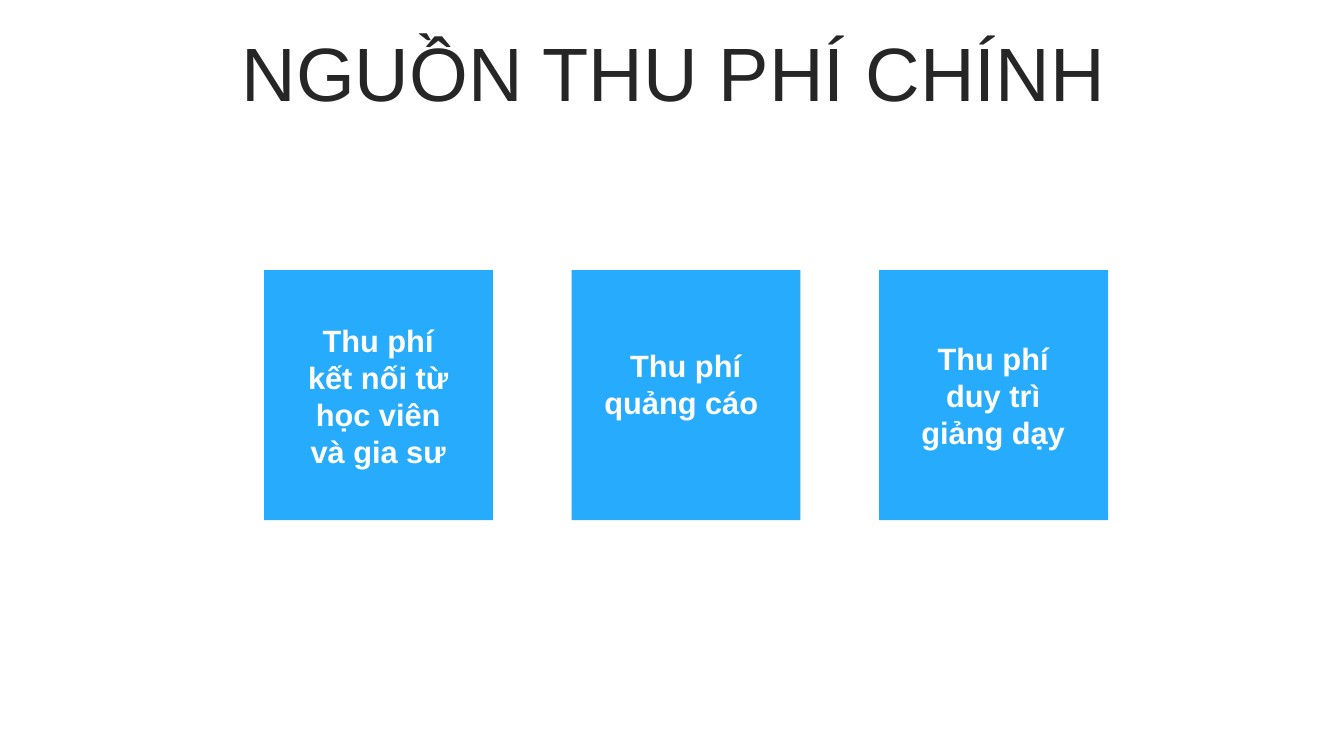
from pptx import Presentation
from pptx.dml.color import RGBColor
from pptx.enum.shapes import MSO_SHAPE
from pptx.enum.text import MSO_ANCHOR, PP_ALIGN
from pptx.util import Inches, Pt

COLORS = {"tile": "27ACFD", "title": "262626", "label": "FFFFFF"}
TITLE_FONT = {"name": "Arial", "size": Pt(54), "bold": False}
LABEL_FONT = {"name": "Arial", "size": Pt(22), "bold": True}
TILE_LEFT, TILE_TOP, TILE_STEP = 2.62, 2.68, 3.05
TILE_W, TILE_H = 2.27, 2.48
LABEL_INSET, LABEL_W = 0.22, 1.82
SOURCES = [
    ("Thu phí kết nối từ học viên và gia sư", 3.14, 1.78),
    ("Thu phí quảng cáo ", 3.39, 0.84),
    ("Thu phí duy trì giảng dạy", 3.32, 1.21),
]


def add_text(s, text, box, font, color, anchor=MSO_ANCHOR.TOP, spacing=1.0):
    tf = s.shapes.add_textbox(*map(Inches, box)).text_frame
    tf.word_wrap = True
    tf.vertical_anchor = anchor
    p = tf.paragraphs[0]
    p.alignment = PP_ALIGN.CENTER
    p.line_spacing = spacing
    r = p.add_run()
    r.text = text
    for key, value in font.items():
        setattr(r.font, key, value)
    r.font.color.rgb = RGBColor.from_string(COLORS[color])


def add_tile(s, left):
    box = (left, TILE_TOP, TILE_W, TILE_H)
    sp = s.shapes.add_shape(MSO_SHAPE.RECTANGLE, *map(Inches, box))
    sp.shadow.inherit = False
    sp.fill.solid()
    sp.fill.fore_color.rgb = RGBColor.from_string(COLORS["tile"])
    sp.line.fill.background()


def main():
    prs = Presentation()
    prs.slide_width, prs.slide_height = Inches(13.33), Inches(7.5)
    s = prs.slides.add_slide(prs.slide_layouts[6])
    add_text(s, "NGUỒN THU PHÍ CHÍNH", (0.35, 0.37, 12.66, 0.79),
             TITLE_FONT, "title", MSO_ANCHOR.MIDDLE, 0.9)
    for i, (text, top, height) in enumerate(SOURCES):
        left = TILE_LEFT + i * TILE_STEP
        add_tile(s, left)
        add_text(s, text, (left + LABEL_INSET, top, LABEL_W, height),
                 LABEL_FONT, "label")
    prs.save("out.pptx")


if __name__ == "__main__":
    main()
